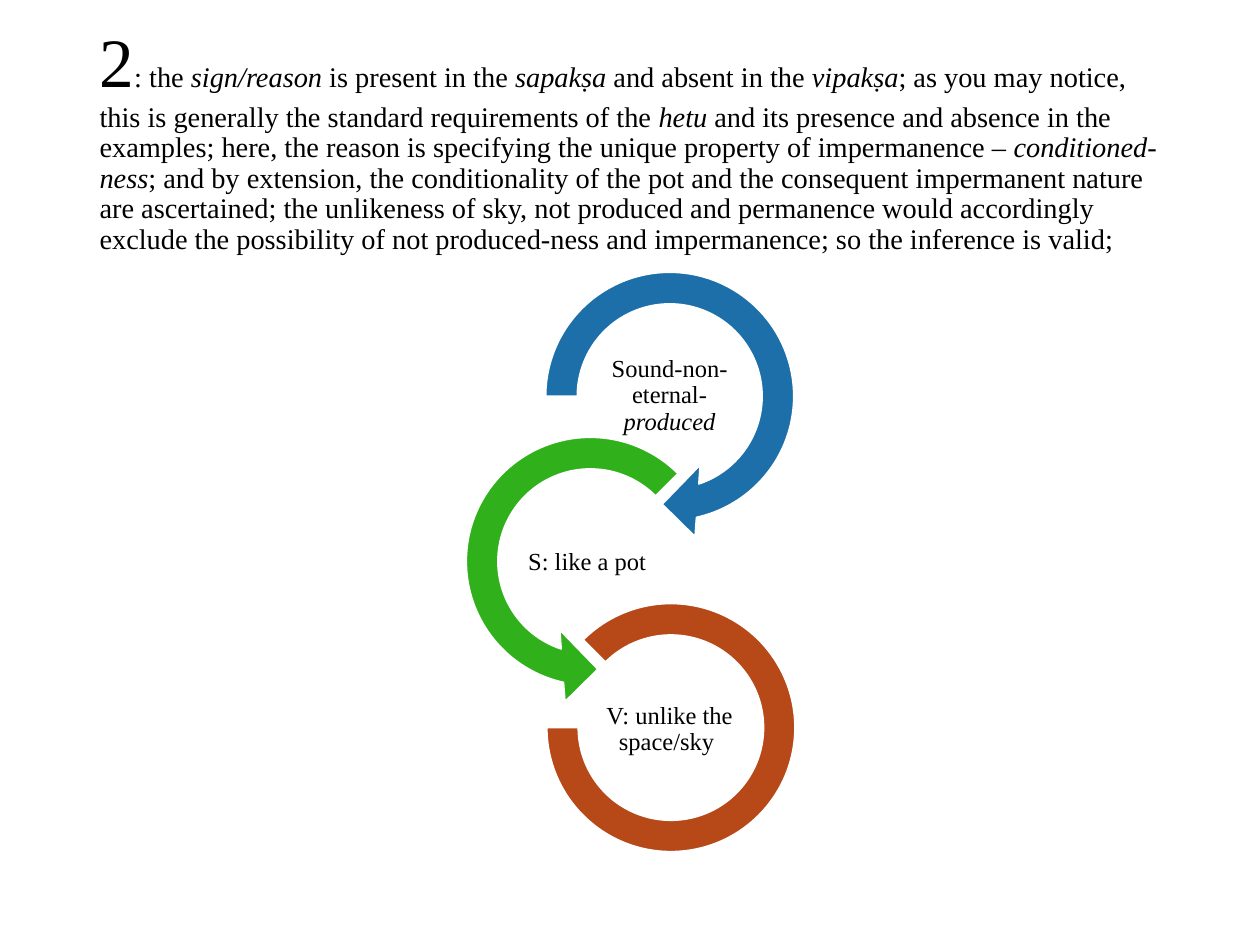
from pptx import Presentation
from pptx.dml.color import RGBColor
from pptx.enum import shapes, text
from pptx.util import Inches, Pt

FONT = "Times New Roman"
SHAPE = shapes.MSO_SHAPE

# Pieces alternate between roman and italic, starting with roman.
NUMBER = "2"
ARGUMENT = [
    ": the ", "sign/reason", " is present in the ", "sapakṣa",
    " and absent in the ", "vipakṣa",
    "; as you may notice, this is generally the standard requirements of the ",
    "hetu",
    " and its presence and absence in the examples; here, the reason is "
    "specifying the unique property of impermanence – ", "conditioned-ness",
    "; and by extension, the conditionality of the pot and the consequent "
    "impermanent nature are ascertained; the unlikeness of sky, not produced "
    "and permanence would accordingly exclude the possibility of not "
    "produced-ness and impermanence; so the inference is valid;",
]

# preset, adjustments, colour, left, top, size, label left, label pieces
STEPS = [
    (SHAPE.CIRCULAR_ARROW, (0.11, 11.42, 45, 108, 0.125), "1D6FA9",
     4.17, 2.0, 2.29, 4.68, ["Sound-non-eternal-", "produced"]),
    (SHAPE.LEFT_CIRCULAR_ARROW, (0.11, 11.42, 63, 189, 0.125), "30B01B",
     3.54, 3.31, 2.29, 4.05, ["S: like a pot "]),
    (SHAPE.BLOCK_ARC, (135, 108, 0.127), "B74919",
     4.34, 4.79, 1.97, 4.68, ["V: unlike the space/sky "]),
]
LABEL_TOP, LABEL_STEP = 2.82, 1.325
LABEL_WIDTH, LABEL_HEIGHT, LABEL_INSET = 1.27, 0.64, 0.01


def color(hex_code):
    return RGBColor.from_string(hex_code)


def add_pieces(paragraph, pieces):
    """Add runs that alternate between roman and italic."""
    for i, piece in enumerate(pieces):
        run = paragraph.add_run()
        run.text = piece
        run.font.italic = i % 2 == 1


def format_paragraph(paragraph, size, alignment):
    paragraph.alignment = alignment
    paragraph.line_spacing = 0.9
    paragraph.font.name = FONT
    paragraph.font.size = Pt(size)
    paragraph.font.color.rgb = color("000000")


def add_title(slide):
    title = slide.shapes.title
    title.left, title.top = Inches(0.69), Inches(0.4)
    title.width, title.height = Inches(8.62), Inches(1.45)
    frame = title.text_frame
    frame.auto_size = text.MSO_AUTO_SIZE.NONE
    frame.vertical_anchor = text.MSO_ANCHOR.MIDDLE
    paragraph = frame.paragraphs[0]
    format_paragraph(paragraph, 16.2, text.PP_ALIGN.LEFT)
    number = paragraph.add_run()
    number.text = NUMBER
    number.font.size = Pt(39.6)
    add_pieces(paragraph, ARGUMENT)


def add_ring(group, preset, adjustments, fill, left, top, size):
    ring = group.shapes.add_shape(
        preset, Inches(left), Inches(top), Inches(size), Inches(size))
    for i, value in enumerate(adjustments):
        ring.adjustments[i] = value
    ring.shadow.inherit = False
    ring.fill.solid()
    ring.fill.fore_color.rgb = color(fill)
    ring.line.color.rgb = color("FFFFFF")
    ring.line.width = Pt(1)


def add_label(group, left, top, pieces):
    label = group.shapes.add_textbox(
        Inches(left), Inches(top), Inches(LABEL_WIDTH), Inches(LABEL_HEIGHT))
    frame = label.text_frame
    frame.word_wrap = True
    frame.vertical_anchor = text.MSO_ANCHOR.MIDDLE
    frame.margin_left = frame.margin_right = Inches(LABEL_INSET)
    frame.margin_top = frame.margin_bottom = Inches(LABEL_INSET)
    format_paragraph(frame.paragraphs[0], 14, text.PP_ALIGN.CENTER)
    add_pieces(frame.paragraphs[0], pieces)


def main():
    prs = Presentation()
    prs.slide_width, prs.slide_height = Inches(10), Inches(7.5)
    slide = prs.slides.add_slide(prs.slide_layouts.get_by_name("Title Only"))
    add_title(slide)
    cycle = slide.shapes.add_group_shape()
    for i, (*ring, label_left, pieces) in enumerate(STEPS):
        add_ring(cycle, *ring)
        add_label(cycle, label_left, LABEL_TOP + i * LABEL_STEP, pieces)
    prs.save("out.pptx")


if __name__ == "__main__":
    main()
